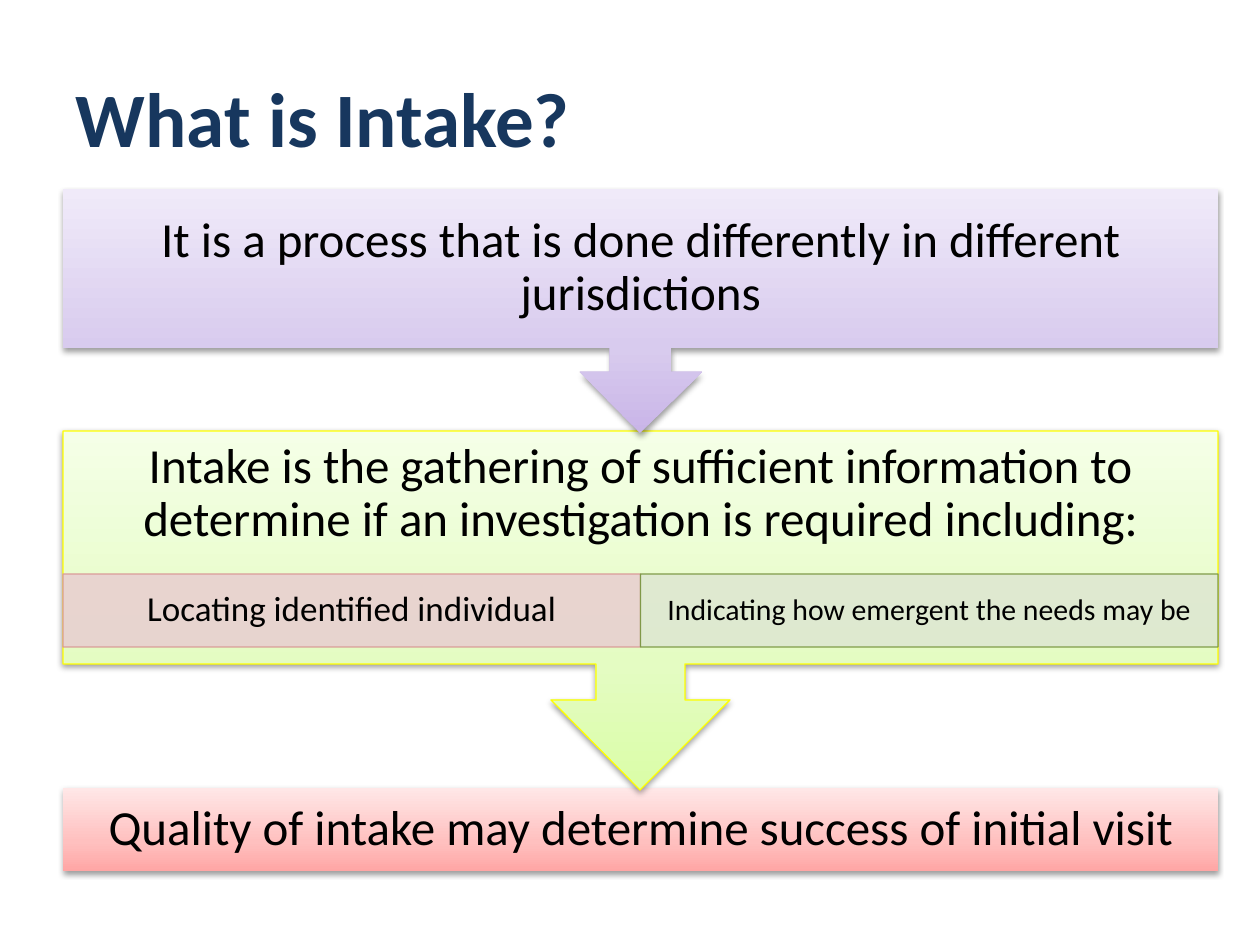
from lxml import etree
from pptx import Presentation
from pptx.dml.color import RGBColor
from pptx.enum.shapes import MSO_SHAPE
from pptx.enum.text import MSO_ANCHOR, PP_ALIGN
from pptx.oxml.ns import qn
from pptx.util import Emu, Pt

RECT = MSO_SHAPE.RECTANGLE
MIDDLE = MSO_ANCHOR.MIDDLE
LEFT, CENTER = PP_ALIGN.LEFT, PP_ALIGN.CENTER

SCALE = 914400 / 126
FONT = "Calibri"
COLORS = {
    "title": "17375E", "text": "000000", "shadow": "000000",
    "yellow": "FFFF00",
    "rose": "E8D0D0", "rose_line": "D99694",
    "sage": "DEE7D1", "sage_line": "77933C",
}
# Gradient stops run from the bottom edge to the top edge
GRADIENTS = {
    "purple": ((0, "C9B5E8"), (35, "D8CBEE"), (100, "F0EAF9")),
    "green": ((0, "DAFDA7"), (35, "E4FCC2"), (100, "F5FFE7")),
    "red": ((0, "FFA6A5"), (35, "FFC0BF"), (100, "FFE7E7")),
}


def px(n):
    return Emu(round(n * SCALE))


def rgb(name):
    return RGBColor.from_string(COLORS[name])


def add_node(parent, tag, **attrs):
    node = etree.SubElement(parent, qn(tag))
    for key, value in attrs.items():
        node.set(key, str(value))
    return node


def set_text(s, text, size, margins, align=CENTER, color="text", bold=False, spacing=0.9):
    tf = s.text_frame
    tf.word_wrap = True
    tf.vertical_anchor = MIDDLE
    for side, margin in zip(("left", "top", "right", "bottom"), margins):
        setattr(tf, f"margin_{side}", px(margin))
    p = tf.paragraphs[0]
    p.alignment = align
    p.line_spacing = spacing
    r = p.add_run()
    r.text = text
    for key, value in {"name": FONT, "size": Pt(size), "bold": bold}.items():
        setattr(r.font, key, value)
    r.font.color.rgb = rgb(color)


def set_line(s, color):
    if color is None:
        s.line.fill.background()
        return
    s.line.color.rgb = rgb(color)
    s.line.width = Pt(0.75)


def style_band(s, gradient, line=None):
    """Vertical gradient, optional outline and a soft shadow below."""
    s.fill.gradient()
    s.fill.gradient_angle = 90
    stops = s.fill._fill._gradFill.find(qn("a:gsLst"))
    for stop in list(stops):
        stops.remove(stop)
    for pos, color in GRADIENTS[gradient]:
        add_node(add_node(stops, "a:gs", pos=pos * 1000), "a:srgbClr", val=color)
    set_line(s, line)
    s.shadow.inherit = False
    effects = s._element.spPr.find(qn("a:effectLst"))
    shadow = add_node(effects, "a:outerShdw", blurRad=40000, dist=20000,
                      dir=5400000, rotWithShape=0)
    add_node(add_node(shadow, "a:srgbClr", val=COLORS["shadow"]), "a:alpha", val=38000)


def add_title(slide, x, y, w, h):
    s = slide.shapes.add_textbox(px(x), px(y), px(w), px(h))
    set_text(s, "What is Intake?", 44, (13, 6, 13, 6), LEFT, "title", True, 1.0)


def add_callout(slide, x, y, w, h, text, gradient, bottom, line=None):
    """Band with a down arrow: the head is a quarter of the height, the neck half the head."""
    mid, head = x + w / 2, h / 4
    neck, body, shoulder, tip = head / 2, y + 0.65 * h, y + h - head, y + h
    fb = slide.shapes.build_freeform(x + w, body, scale=SCALE)
    fb.add_line_segments([
        (mid + neck, body), (mid + neck, shoulder), (mid + head, shoulder),
        (mid, tip),
        (mid - head, shoulder), (mid - neck, shoulder), (mid - neck, body),
        (x, body), (x, y), (x + w, y),
    ], close=True)
    s = fb.convert_to_shape()
    style_band(s, gradient, line)
    set_text(s, text, 28, (28, 28, 28, bottom))


def add_conclusion(slide, x, y, w, h):
    s = slide.shapes.add_shape(RECT, px(x), px(y), px(w), px(h))
    style_band(s, "red")
    set_text(s, "Quality of intake may determine success of initial visit", 28, (28,) * 4)


def add_details(slide, x, y, w, h):
    """Two translucent cells side by side."""
    cells = (
        ("Locating identified individual", 20, "rose", (20, 4, 20, 4)),
        ("Indicating how emergent the needs may be", 17, "sage", (16, 3, 16, 3)),
    )
    cell_w = w / len(cells)
    for i, (text, size, color, margins) in enumerate(cells):
        s = slide.shapes.add_shape(RECT, px(x + i * cell_w), px(y), px(cell_w), px(h))
        s.shadow.inherit = False
        s.fill.solid()
        s.fill.fore_color.rgb = rgb(color)
        set_line(s, f"{color}_line")
        for node in s._element.spPr.iter(qn("a:srgbClr")):
            add_node(node, "a:alpha", val=90000)
        set_text(s, text, size, margins)


def main():
    prs = Presentation()
    prs.slide_width, prs.slide_height = px(1260), px(945)
    slide = prs.slides.add_slide(prs.slide_layouts[6])
    x, w = 63, 1155

    add_title(slide, x, 38, 1134, 157)
    # Bands run from bottom to top so that each arrow tip lies over the next band
    add_conclusion(slide, x, 788, w, 83)
    add_callout(slide, x, 431, w, 359,
                "Intake is the gathering of sufficient information to determine "
                "if an investigation is required including:", "green", 261, "yellow")
    add_details(slide, x, 574, w, 73)
    add_callout(slide, x, 189, w, 244,
                "It is a process that is done differently in different jurisdictions",
                "purple", 113)
    prs.save("out.pptx")


if __name__ == "__main__":
    main()
